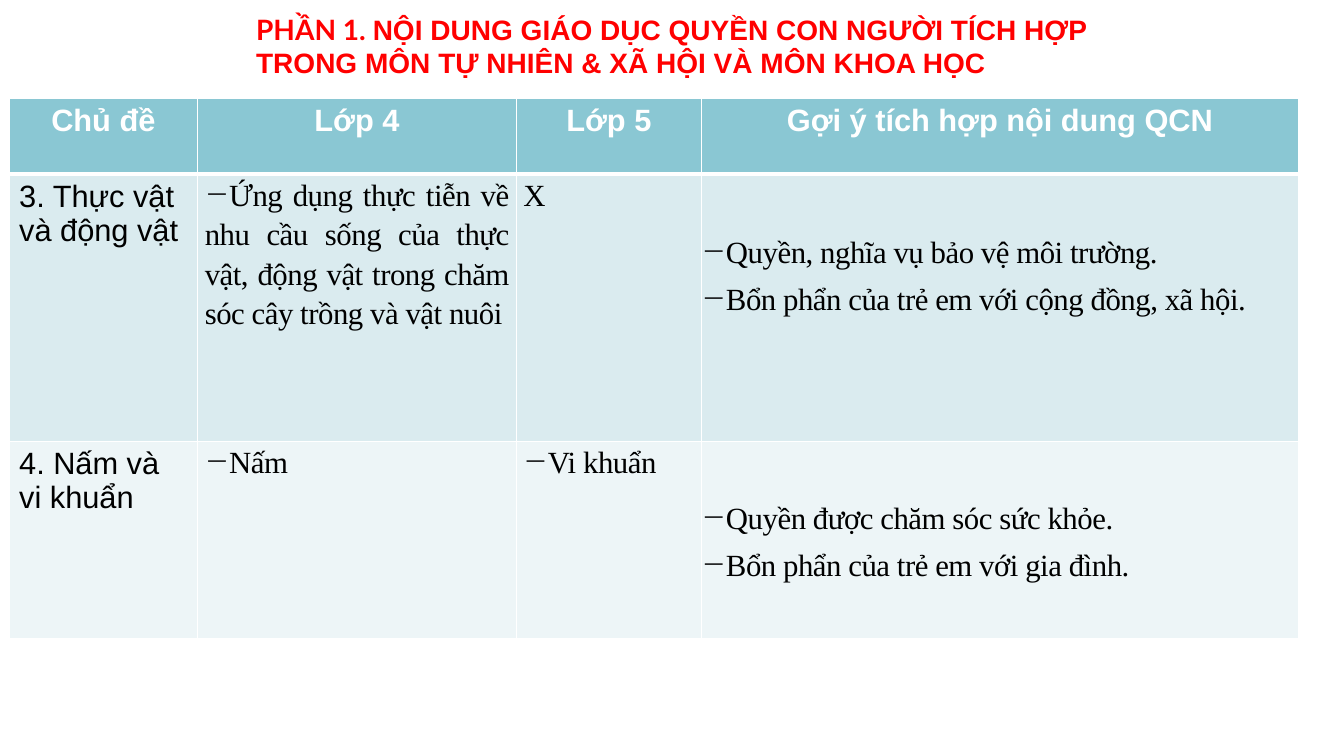
import lxml.etree
import pptx
import pptx.dml.color
import pptx.enum.text
import pptx.oxml.ns
import pptx.util

Cm = pptx.util.Cm
Pt = pptx.util.Pt
RGBColor = pptx.dml.color.RGBColor
ALIGN = pptx.enum.text.PP_ALIGN
ANCHOR = pptx.enum.text.MSO_ANCHOR
qn = pptx.oxml.ns.qn

RED = RGBColor(0xFF, 0x00, 0x00)
WHITE = RGBColor(0xFF, 0xFF, 0xFF)
BLACK = RGBColor(0x00, 0x00, 0x00)
TEAL = RGBColor(0x8A, 0xC7, 0xD3)
LIGHT_TEAL = RGBColor(0xDA, 0xEB, 0xEF)
PALE_TEAL = RGBColor(0xED, 0xF5, 0xF7)

COLUMN_WIDTHS = [4.75, 8.03, 4.67, 15.04]
ROW_HEIGHTS = [1.9, 6.73, 4.98]
HEADINGS = ["Chủ đề", "Lớp 4", "Lớp 5", "Gợi ý tích hợp nội dung QCN"]
TOPICS = [
    (
        LIGHT_TEAL,
        "3. Thực vật và động vật",
        ["−Ứng dụng thực tiễn về nhu cầu sống của thực vật, động vật "
         "trong chăm sóc cây trồng và vật nuôi"],
        ["X"],
        ["−Quyền, nghĩa vụ bảo vệ môi trường.",
         "−Bổn phẩn của trẻ em với cộng đồng, xã hội."],
        Cm(1.7),
    ),
    (
        PALE_TEAL,
        "4. Nấm và vi khuẩn",
        ["−Nấm"],
        ["−Vi khuẩn"],
        ["−Quyền được chăm sóc sức khỏe.",
         "−Bổn phẩn của trẻ em với gia đình."],
        Cm(0),
    ),
]


def add_run(paragraph, text, size, font_name, color, bold=False):
    run = paragraph.add_run()
    run.text = text
    run.font.size = Pt(size)
    run.font.name = font_name
    run.font.color.rgb = color
    run.font.bold = bold
    return run


def add_title(slide):
    title = slide.shapes.title
    title.left, title.top = Cm(6.2), Cm(0.18)
    title.width, title.height = Cm(22.25), Cm(2.87)
    frame = title.text_frame
    frame.word_wrap = True
    frame.auto_size = pptx.enum.text.MSO_AUTO_SIZE.SHAPE_TO_FIT_TEXT
    frame.vertical_anchor = ANCHOR.TOP
    paragraph = frame.paragraphs[0]
    paragraph.alignment = ALIGN.LEFT
    add_run(paragraph, "PHẦN 1. ", 20, "Lato", RED, True)
    add_run(paragraph, "NỘI DUNG GIÁO DỤC QUYỀN CON NGƯỜI TÍCH HỢP "
            "TRONG MÔN TỰ NHIÊN & XÃ HỘI VÀ MÔN KHOA HỌC", 20, "Arial", RED, True)


def set_borders(cell, top, bottom):
    properties = cell._tc.get_or_add_tcPr()
    widths = {"a:lnL": 1, "a:lnR": 1, "a:lnT": top, "a:lnB": bottom}
    for index, (tag, width) in enumerate(widths.items()):
        line = lxml.etree.Element(qn(tag), w=str(Pt(width)))
        fill = lxml.etree.SubElement(line, qn("a:solidFill"))
        lxml.etree.SubElement(fill, qn("a:srgbClr"), val=str(WHITE))
        properties.insert(index, line)


def style_cell(cell, color, top=1, bottom=1):
    cell.fill.solid()
    cell.fill.fore_color.rgb = color
    set_borders(cell, top, bottom)


def set_margins(cell, side, bottom):
    cell.margin_left = cell.margin_right = side
    cell.margin_top = Cm(0)
    cell.margin_bottom = bottom


def set_bullet(paragraph, character):
    properties = paragraph._p.get_or_add_pPr()
    if character:
        properties.set("marL", "0")
        properties.set("indent", str(-Cm(0.95)))
        lxml.etree.SubElement(properties, qn("a:buChar"), char=character)
    tabs = lxml.etree.SubElement(properties, qn("a:tabLst"))
    lxml.etree.SubElement(tabs, qn("a:tab"), pos=str(Cm(0.41)), algn="l")


def write_content(cell, items):
    frame = cell.text_frame
    for index, item in enumerate(items):
        paragraph = frame.add_paragraph() if index else frame.paragraphs[0]
        set_bullet(paragraph, "−" if item.startswith("−") else "")
        paragraph.alignment = ALIGN.JUSTIFY
        paragraph.line_spacing = 1.15
        paragraph.space_before = Pt(3 if index else 0)
        paragraph.space_after = Pt(3)
        run = add_run(paragraph, item.lstrip("−"), 22, "Times New Roman", BLACK)
        run.font._element.set("spc", "-30")


def add_topic_table(slide):
    table = slide.shapes.add_table(
        len(ROW_HEIGHTS), len(COLUMN_WIDTHS), Cm(0.23), Cm(2.49),
        Cm(sum(COLUMN_WIDTHS)), Cm(sum(ROW_HEIGHTS))).table
    for column, width in zip(table.columns, COLUMN_WIDTHS):
        column.width = Cm(width)
    for row, height in zip(table.rows, ROW_HEIGHTS):
        row.height = Cm(height)

    for cell, heading in zip(table.rows[0].cells, HEADINGS):
        style_cell(cell, TEAL, bottom=3)
        paragraph = cell.text_frame.paragraphs[0]
        paragraph.alignment = ALIGN.CENTER
        add_run(paragraph, heading, 22, "Arial", WHITE, True)

    for number, topic in enumerate(TOPICS, start=1):
        color, name, grade_four, grade_five, rights, rights_bottom = topic
        cells = list(table.rows[number].cells)
        for cell in cells:
            style_cell(cell, color, top=3 if number == 1 else 1)
        add_run(cells[0].text_frame.paragraphs[0], name, 22, "Arial", BLACK)
        for cell, items in zip(cells[1:], [grade_four, grade_five, rights]):
            set_margins(cell, Cm(0.18), Cm(0))
            write_content(cell, items)
        set_margins(cells[3], Cm(0), rights_bottom)
        cells[3].vertical_anchor = ANCHOR.MIDDLE


def main():
    presentation = pptx.Presentation()
    presentation.slide_width = Cm(33.87)
    presentation.slide_height = Cm(19.05)
    slide = presentation.slides.add_slide(presentation.slide_layouts[5])
    add_title(slide)
    add_topic_table(slide)
    presentation.save("out.pptx")


if __name__ == "__main__":
    main()
